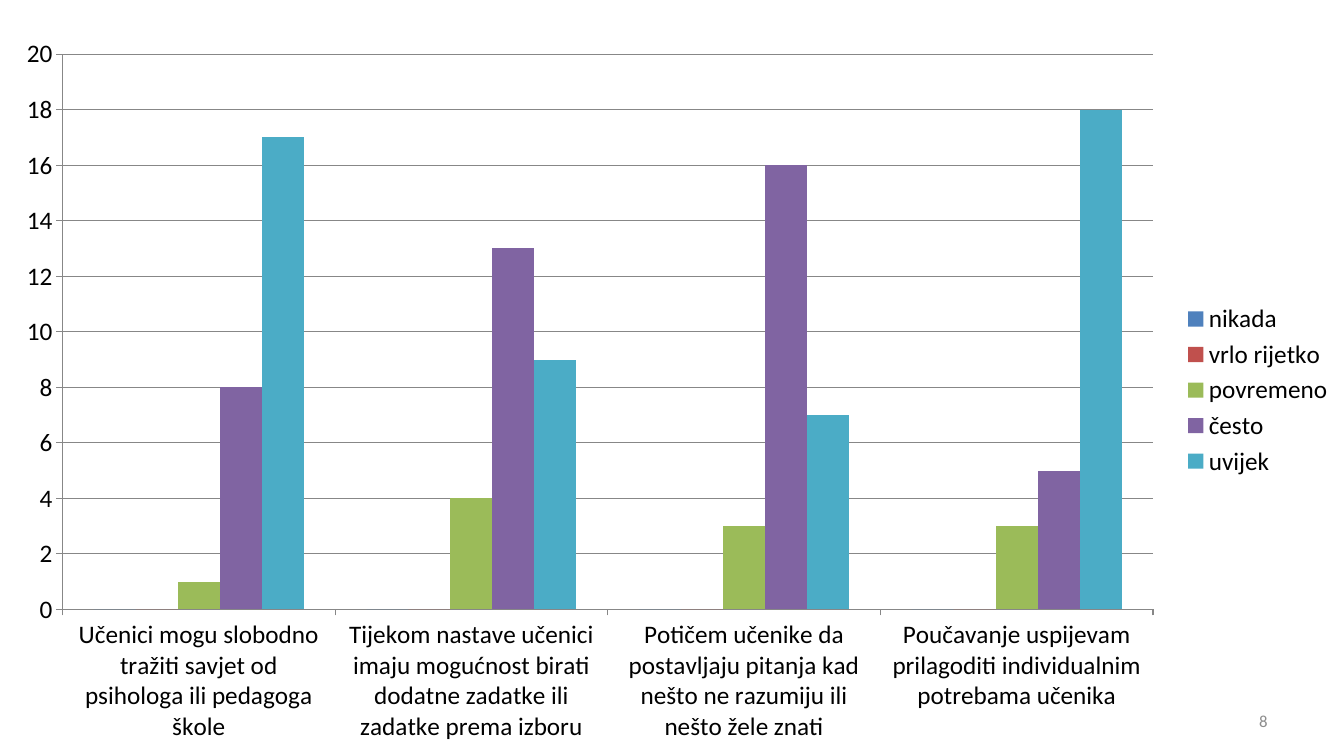
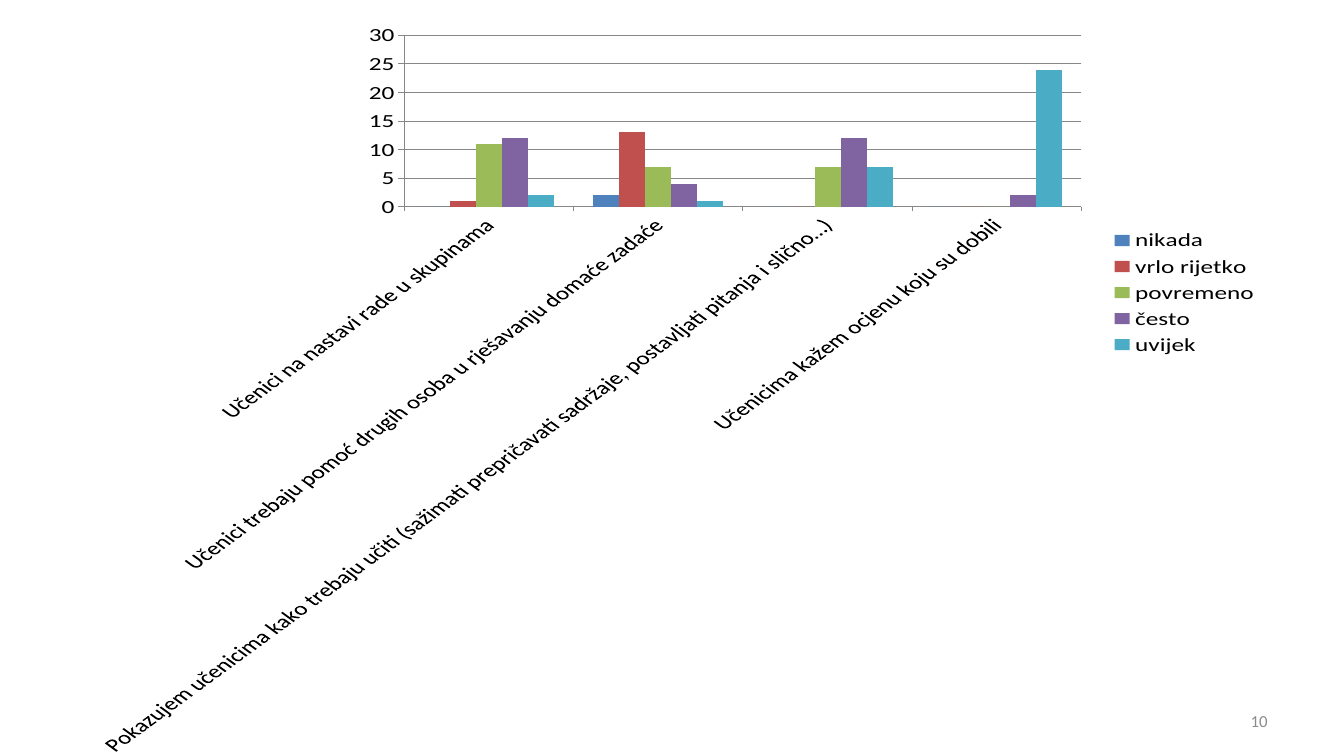
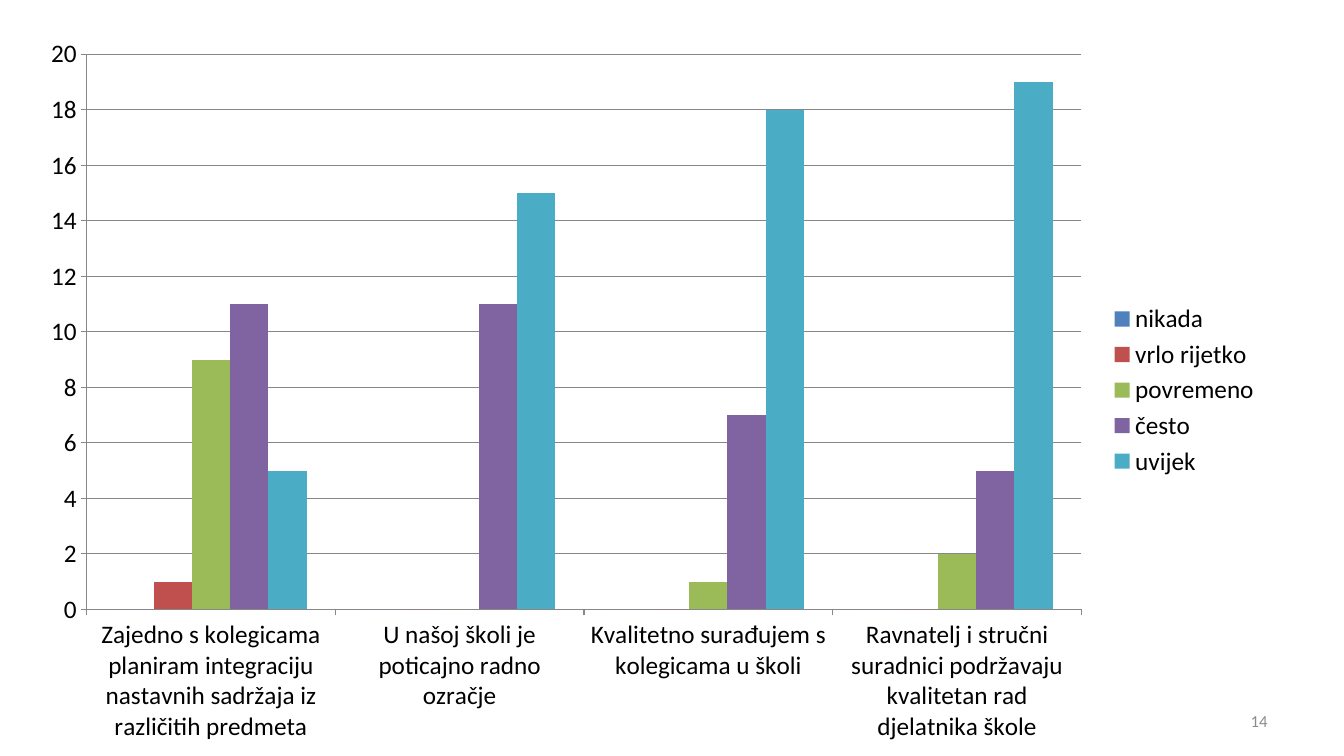
from pptx import Presentation
from pptx.chart.data import CategoryChartData
from pptx.dml.color import RGBColor
from pptx.enum import chart as charts, text
from pptx.util import Inches, Pt

FONT = "Calibri"
COLOURS = {"text": "000000", "axis": "878787", "number": "8C8C8C"}

# Answer scale shared by all charts: series name -> colour
ANSWERS = {
    "nikada": "4F81BD",
    "vrlo rijetko": "C0504D",
    "povremeno": "9BBB59",
    "često": "8064A2",
    "uvijek": "4BACC6",
}

# Each question has one count per answer, in the order of ANSWERS
SLIDES = [
    {"number": 8, "left": 0, "width": 13.33, "questions": {
        "Učenici mogu slobodno tražiti savjet od psihologa ili pedagoga škole": (0, 0, 1, 8, 17),
        "Tijekom nastave učenici imaju mogućnost birati dodatne zadatke ili zadatke prema izboru":
            (0, 0, 4, 13, 9),
        "Potičem učenike da postavljaju pitanja kad nešto ne razumiju ili nešto žele znati":
            (0, 0, 3, 16, 7),
        "Poučavanje uspijevam prilagoditi individualnim potrebama učenika": (0, 0, 3, 5, 18),
    }},
    {"number": 10, "left": 0.26, "width": 12.34, "questions": {
        "Učenici na nastavi rade u skupinama": (0, 1, 11, 12, 2),
        "Učenici trebaju pomoć drugih osoba u rješavanju domaće zadaće": (2, 13, 7, 4, 1),
        "Pokazujem učenicima kako trebaju učiti (sažimati prepričavati sadržaje, "
        "postavljati pitanja i slično…)": (0, 0, 7, 12, 7),
        " Učenicima kažem ocjenu koju su dobili": (0, 0, 0, 2, 24),
    }},
    {"number": 14, "left": 0.26, "width": 12.34, "questions": {
        "Zajedno s kolegicama planiram integraciju nastavnih sadržaja iz različitih predmeta":
            (0, 1, 9, 11, 5),
        "U našoj školi je poticajno radno ozračje": (0, 0, 0, 11, 15),
        "Kvalitetno surađujem s kolegicama u školi": (0, 0, 1, 7, 18),
        "Ravnatelj i stručni suradnici podržavaju kvalitetan rad djelatnika škole":
            (0, 0, 2, 5, 19),
    }},
]


def colour(name):
    return RGBColor.from_string(COLOURS[name])


def style_font(font, size, colour_name):
    font.name = FONT
    font.size = Pt(size)
    font.color.rgb = colour(colour_name)


def style_line(line):
    line.color.rgb = colour("axis")
    line.width = Pt(0.75)


def add_survey_chart(slide, left, width, questions):
    data = CategoryChartData()
    data.categories = list(questions)
    for answer, counts in zip(ANSWERS, zip(*questions.values())):
        data.add_series(answer, counts)
    chart = slide.shapes.add_chart(
        charts.XL_CHART_TYPE.COLUMN_CLUSTERED,
        Inches(left), Inches(0.24), Inches(width), Inches(7.26), data).chart
    chart.has_title = False
    style_font(chart.font, 18, "text")

    # Columns
    plot = chart.plots[0]
    plot.gap_width = 150
    plot.overlap = 0
    plot.vary_by_categories = False
    for series in plot.series:
        series.format.fill.solid()
        series.format.fill.fore_color.rgb = RGBColor.from_string(ANSWERS[series.name])

    # Axes and gridlines
    for axis in (chart.category_axis, chart.value_axis):
        axis.major_tick_mark = charts.XL_TICK_MARK.OUTSIDE
        axis.minor_tick_mark = charts.XL_TICK_MARK.NONE
        style_line(axis.format.line)
    chart.value_axis.has_major_gridlines = True
    style_line(chart.value_axis.major_gridlines.format.line)

    # Legend
    chart.has_legend = True
    chart.legend.position = charts.XL_LEGEND_POSITION.RIGHT
    chart.legend.include_in_layout = False


def add_slide_number(slide, number):
    box = slide.shapes.add_textbox(Inches(9.56), Inches(6.95), Inches(3.11), Inches(0.4))
    frame = box.text_frame
    frame.word_wrap = True
    frame.vertical_anchor = text.MSO_ANCHOR.MIDDLE
    frame.text = str(number)
    paragraph = frame.paragraphs[0]
    paragraph.alignment = text.PP_ALIGN.RIGHT
    style_font(paragraph.runs[0].font, 12, "number")


def main():
    presentation = Presentation()
    presentation.slide_width = Inches(13.33)
    presentation.slide_height = Inches(7.5)
    blank = presentation.slide_layouts[6]
    for content in SLIDES:
        slide = presentation.slides.add_slide(blank)
        add_survey_chart(slide, content["left"], content["width"], content["questions"])
        add_slide_number(slide, content["number"])
    presentation.save("out.pptx")


if __name__ == "__main__":
    main()
